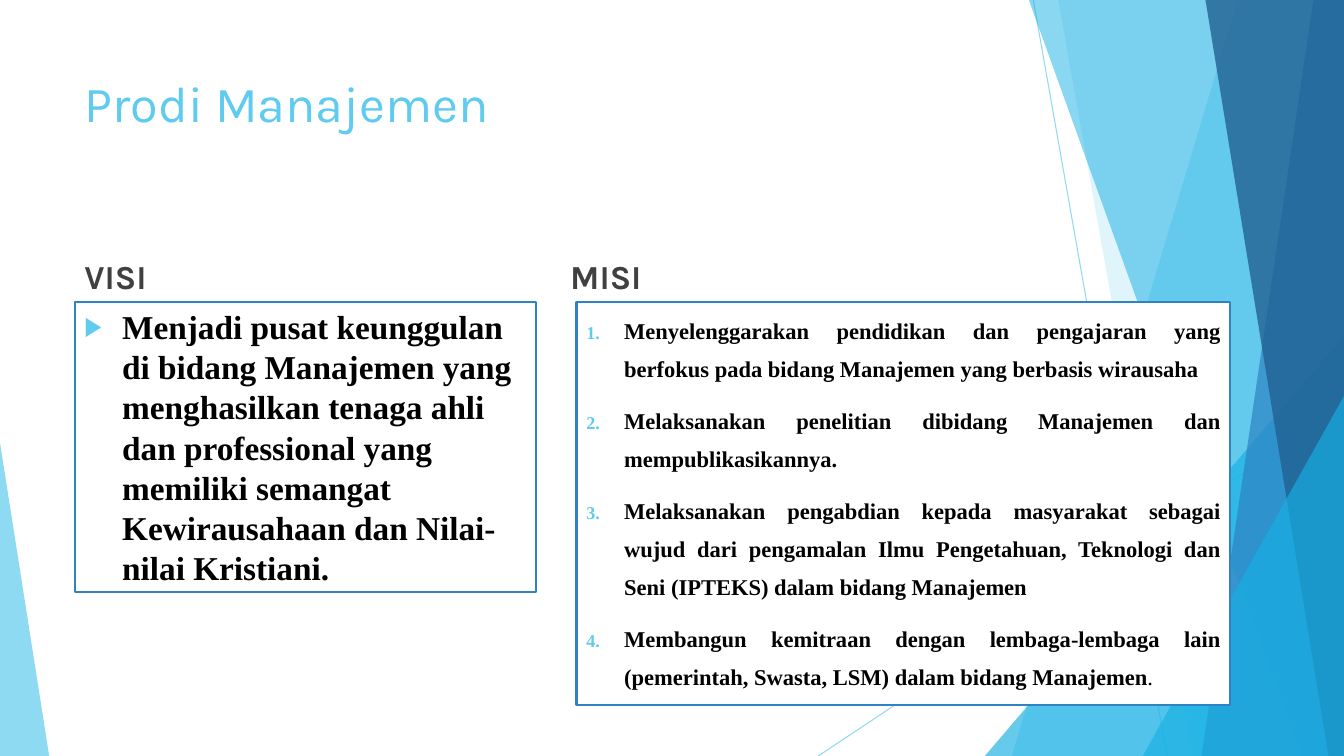
from lxml import etree
from pptx import Presentation
from pptx.dml.color import RGBColor
from pptx.enum import shapes, text
from pptx.oxml import ns
from pptx.util import Cm, Pt

SKY = RGBColor(0x5F, 0xCB, 0xEF)
CYAN = RGBColor(0x17, 0xB0, 0xE4)
BLUE = RGBColor(0x2E, 0x83, 0xC3)
NAVY = RGBColor(0x22, 0x62, 0x92)
GREY = RGBColor(0x40, 0x40, 0x40)
BLACK = RGBColor(0, 0, 0)
WHITE = RGBColor(0xFF, 0xFF, 0xFF)
WIDTH, HEIGHT = 33.87, 19.05


def add_child(parent, tag, **attributes):
    child = etree.SubElement(parent, ns.qn(tag))
    for name, value in attributes.items():
        child.set(name, str(value))
    return child


def write(para, words, style):
    span = para.add_run()
    span.text = words
    span.font.color.rgb = style["color"]
    for name in ("name", "size", "bold"):
        setattr(span.font, name, style[name])


deck = Presentation()
deck.slide_width, deck.slide_height = Cm(WIDTH), Cm(HEIGHT)
page = deck.slides.add_slide(deck.slide_layouts[5])

for x1, y1, x2, y2 in [(26.04, 0, 29.41, HEIGHT), (WIDTH, 10.24, 20.62, HEIGHT)]:
    line = page.shapes.add_connector(
        shapes.MSO_CONNECTOR.STRAIGHT, Cm(x1), Cm(y1), Cm(x2), Cm(y2))
    line.line.width = Pt(0.75)
    line.line.color.rgb = SKY
    properties = line._element.spPr
    add_child(properties.find(".//" + ns.qn("a:srgbClr")), "a:alpha", val=70000)
    add_child(properties, "a:effectLst")

facets = [
    ("band", (31.19, 25.5), SKY, 36),
    ("band", (26.67, 30.05), SKY, 20),
    ("triangle", (24.82, 8.46, 9.05, 1), CYAN, 66),
    ("band", (25.93, 32.79), CYAN, 50),
    ("band", (33.1, 30.28), BLUE, 70),
    ("band", (30.38, 33.48), NAVY, 80),
    ("triangle", (28.8, 9.98, 5.07, 1), CYAN, 66),
    ("triangle", (0, 11.15, 1.24, 0), SKY, 70),
]
for kind, place, color, opacity in facets:
    if kind == "band":
        top_x, bottom_x = place
        outline = page.shapes.build_freeform(Cm(top_x), 0)
        outline.add_line_segments(
            [(Cm(WIDTH), 0), (Cm(WIDTH), Cm(HEIGHT)), (Cm(bottom_x), Cm(HEIGHT))])
        facet = outline.convert_to_shape()
    else:
        left, top, width, apex = place
        facet = page.shapes.add_shape(
            shapes.MSO_SHAPE.ISOSCELES_TRIANGLE,
            Cm(left), Cm(top), Cm(width), Cm(HEIGHT - top))
        facet.adjustments[0] = apex
    facet.shadow.inherit = False
    facet.line.fill.background()
    facet.fill.solid()
    facet.fill.fore_color.rgb = color
    tint = facet._element.spPr.find(".//" + ns.qn("a:srgbClr"))
    add_child(tint, "a:alpha", val=opacity * 1000)

title = page.shapes.title
title.left, title.top, title.width, title.height = Cm(1.88), Cm(1.7), Cm(23.88), Cm(3.66)
title.text_frame.vertical_anchor = text.MSO_ANCHOR.TOP
title.text_frame.paragraphs[0].alignment = text.PP_ALIGN.LEFT
write(title.text_frame.paragraphs[0], "Prodi Manajemen",
      {"name": "Karla", "size": Pt(36), "bold": False, "color": SKY})

label_style = {"name": "Karla", "size": Pt(24), "bold": True, "color": GREY}
for left, label in [(1.88, "VISI"), (14.12, "MISI")]:
    box = page.shapes.add_textbox(Cm(left), Cm(6), Cm(11.63), Cm(1.6))
    box.text_frame.word_wrap = True
    box.text_frame.vertical_anchor = text.MSO_ANCHOR.BOTTOM
    write(box.text_frame.paragraphs[0], label, label_style)

panels = [
    {"place": (1.88, 7.6, 11.63, 7.32), "size": Pt(23.8),
     "align": text.PP_ALIGN.LEFT, "spacing": Pt(28.6), "numbered": False,
     "items": ["Menjadi pusat keunggulan di bidang Manajemen yang menghasilkan "
               "tenaga ahli dan professional yang memiliki semangat "
               "Kewirausahaan dan Nilai-nilai Kristiani."]},
    {"place": (14.53, 7.6, 16.48, 10.16), "size": Pt(16.1),
     "align": text.PP_ALIGN.JUSTIFY, "spacing": Pt(27.1), "numbered": True,
     "items": ["Menyelenggarakan pendidikan dan pengajaran yang berfokus pada "
               "bidang Manajemen yang berbasis wirausaha",
               "Melaksanakan penelitian dibidang Manajemen dan "
               "mempublikasikannya.",
               "Melaksanakan pengabdian kepada masyarakat sebagai wujud dari "
               "pengamalan Ilmu Pengetahuan, Teknologi dan Seni (IPTEKS) dalam "
               "bidang Manajemen",
               "Membangun kemitraan dengan lembaga-lembaga lain (pemerintah, "
               "Swasta, LSM) dalam bidang Manajemen"]},
]
for panel in panels:
    box = page.shapes.add_shape(
        shapes.MSO_SHAPE.RECTANGLE, *[Cm(length) for length in panel["place"]])
    box.shadow.inherit = False
    box.fill.solid()
    box.fill.fore_color.rgb = WHITE
    box.line.color.rgb = BLUE
    box.line.width = Pt(1.5)
    frame = box.text_frame
    frame.word_wrap = True
    frame.vertical_anchor = text.MSO_ANCHOR.TOP
    style = {"name": "Times New Roman", "size": panel["size"],
             "bold": True, "color": BLACK}
    layout = {"alignment": panel["align"], "line_spacing": panel["spacing"],
              "space_before": Pt(10)}
    for index, item in enumerate(panel["items"]):
        para = frame.add_paragraph() if index else frame.paragraphs[0]
        for name, value in layout.items():
            setattr(para, name, value)
        write(para, item, style)
        properties = para._p.get_or_add_pPr()
        properties.set("marL", str(Cm(0.95)))
        properties.set("indent", str(-Cm(0.95)))
        add_child(add_child(properties, "a:buClr"), "a:srgbClr", val=SKY)
        add_child(properties, "a:buSzPct", val=80000)
        if panel["numbered"]:
            add_child(properties, "a:buFont", typeface="+mj-lt")
            add_child(properties, "a:buAutoNum", type="arabicPeriod")
        else:
            add_child(properties, "a:buFont", typeface="Arial")
            add_child(properties, "a:buChar", char="▶")
    if panel["numbered"]:
        para.space_after = Pt(8)
        write(para, ".", {**style, "bold": False})

deck.save("out.pptx")
